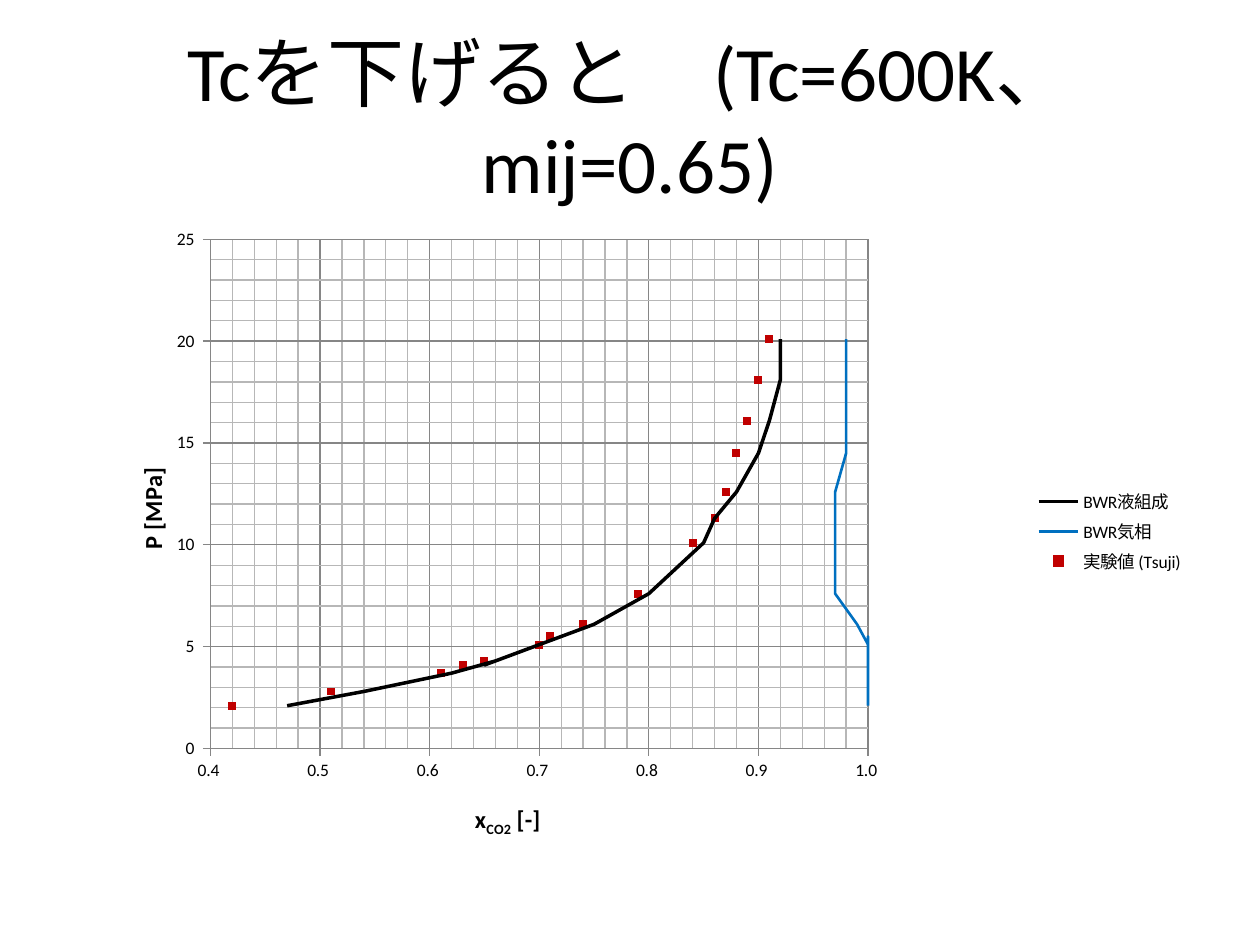
import pptx
import pptx.chart.data
import pptx.dml.color
import pptx.enum.chart
import pptx.enum.text
import pptx.oxml
import pptx.oxml.ns
import pptx.util

Cm, Pt = pptx.util.Cm, pptx.util.Pt
RGBColor = pptx.dml.color.RGBColor
BLACK = RGBColor(0x00, 0x00, 0x00)
BLUE = RGBColor(0x00, 0x70, 0xC0)
RED = RGBColor(0xC0, 0x00, 0x00)
GRAY = RGBColor(0x86, 0x86, 0x86)
LIGHT_GRAY = RGBColor(0xB7, 0xB7, 0xB7)
FONT = "Calibri"

HEADING = "Tcを下げると　(Tc=600K、mij=0.65)"
PRESSURE = [2.1, 2.8, 3.7, 4.3, 5.5, 4.1, 5.1, 6.1,
            7.6, 10.1, 11.3, 12.6, 14.5, 16.1, 18.1, 20.1]
COMPOSITION = {
    "BWR液組成": [0.47, 0.54, 0.62, 0.66, 0.72, 0.65, 0.7, 0.75,
               0.8, 0.85, 0.86, 0.88, 0.9, 0.91, 0.92, 0.92],
    "BWR気相": [1, 1, 1, 1, 1, 1, 1, 0.99,
              0.97, 0.97, 0.97, 0.97, 0.98, 0.98, 0.98, 0.98],
    "実験値 (Tsuji)": [0.42, 0.51, 0.61, 0.65, 0.71, 0.63, 0.7, 0.74,
                    0.79, 0.84, 0.86, 0.87, 0.88, 0.89, 0.9, 0.91],
}
CURVE_LINES = [(BLACK, 2), (BLUE, 1.5)]
AXIS_FORMATS = {
    "category_axis": {"minimum_scale": 0.4, "maximum_scale": 1, "major_unit": 0.1, "minor_unit": 0.02},
    "value_axis": {"minimum_scale": 0, "maximum_scale": 25, "major_unit": 5, "minor_unit": 1},
}
AXIS_LABELS = {
    "category_axis": ("0.0_ ", [("x", 0), ("CO2", -25000), (" [-]", 0)], {"x": 0.36, "y": 0.93}),
    "value_axis": ("0_ ", [("P [MPa]", 0)], {"x": 0.06, "y": 0.39}),
}
PLOT_BOX = {"x": 0.13, "y": 0.03, "w": 0.58, "h": 0.82}


def set_format(target, values):
    """Set each attribute of the target from a dict."""
    for key, value in values.items():
        setattr(target, key, value)


def set_layout(parent, fractions, inner=False):
    """Give a chart part a manual position in fractions of the chart."""
    tags = [("layoutTarget", "inner")] if inner else []
    tags += [(f"{key}Mode", "edge") for key in ("x", "y")]
    tags += list(fractions.items())
    body = "".join(f'<c:{tag} val="{value}"/>' for tag, value in tags)
    layout = pptx.oxml.parse_xml(
        f'<c:layout {pptx.oxml.ns.nsdecls("c")}><c:manualLayout>{body}</c:manualLayout></c:layout>')
    old = parent.find(pptx.oxml.ns.qn("c:layout"))
    if old is not None:
        parent.replace(old, layout)
    else:
        parent.insert(1 if parent.tag == pptx.oxml.ns.qn("c:title") else 0, layout)


def add_heading(slide, left, top, width, height):
    """Write the centred heading in its box."""
    frame = slide.shapes.add_textbox(left, top, width, height).text_frame
    set_format(frame, {"word_wrap": True, "vertical_anchor": pptx.enum.text.MSO_ANCHOR.MIDDLE})
    paragraph = frame.paragraphs[0]
    paragraph.alignment = pptx.enum.text.PP_ALIGN.CENTER
    run = paragraph.add_run()
    run.text = HEADING
    set_format(run.font, {"size": Pt(44), "name": FONT})
    run.font.color.rgb = BLACK


def color_minor_grid(axis):
    """Draw the minor gridlines of an axis in light gray."""
    grid = axis._element.find(pptx.oxml.ns.qn("c:minorGridlines"))
    grid.append(pptx.oxml.parse_xml(
        f'<c:spPr {pptx.oxml.ns.nsdecls("c", "a")}><a:ln w="{Pt(0.75)}"><a:solidFill>'
        f'<a:srgbClr val="{LIGHT_GRAY}"/></a:solidFill></a:ln></c:spPr>'))


def format_axis(axis, scale, number_format, title_parts, title_position):
    """Set scale, grid, labels and title of one axis."""
    set_format(axis, scale | {
        "has_major_gridlines": True, "has_minor_gridlines": True,
        "major_tick_mark": pptx.enum.chart.XL_TICK_MARK.OUTSIDE,
        "minor_tick_mark": pptx.enum.chart.XL_TICK_MARK.NONE,
        "crosses": pptx.enum.chart.XL_AXIS_CROSSES.MINIMUM,
    })
    set_format(axis.tick_labels, {"number_format": number_format, "number_format_is_linked": False})
    for part in (axis, axis.major_gridlines):
        part.format.line.color.rgb = GRAY
        part.format.line.width = Pt(0.75)
    color_minor_grid(axis)
    paragraph = axis.axis_title.text_frame.paragraphs[0]
    for text, baseline in title_parts:
        run = paragraph.add_run()
        run.text = text
        set_format(run.font, {"size": Pt(14), "bold": True, "name": FONT})
        run.font.color.rgb = BLACK
        if baseline:
            run.font._element.set("baseline", str(baseline))
    set_layout(axis.axis_title._element, title_position)


def format_series(plot):
    """Draw the calculated curves as lines and the measurements as squares."""
    *curves, measured = plot.series
    for curve, (color, width) in zip(curves, CURVE_LINES):
        curve.format.line.color.rgb = color
        curve.format.line.width = Pt(width)
    measured.format.line.fill.background()
    set_format(measured.marker, {"style": pptx.enum.chart.XL_MARKER_STYLE.SQUARE, "size": 4})
    measured.marker.format.fill.solid()
    measured.marker.format.fill.fore_color.rgb = RED
    measured.marker.format.line.color.rgb = RED


def add_pressure_chart(slide, left, top, width, height):
    """Place the pressure against composition chart in its box."""
    data = pptx.chart.data.XyChartData()
    for name, fractions in COMPOSITION.items():
        series = data.add_series(name)
        for fraction, pressure in zip(fractions, PRESSURE):
            series.add_data_point(fraction, pressure)
    chart = slide.shapes.add_chart(
        pptx.enum.chart.XL_CHART_TYPE.XY_SCATTER_SMOOTH_NO_MARKERS,
        left, top, width, height, data).chart
    set_format(chart, {"has_title": False, "has_legend": True})
    set_format(chart.font, {"size": Pt(10), "name": FONT})
    chart.font.color.rgb = BLACK
    set_format(chart.legend, {"position": pptx.enum.chart.XL_LEGEND_POSITION.RIGHT,
                              "include_in_layout": False})
    chart.plots[0].vary_by_categories = False
    for axis_name, scale in AXIS_FORMATS.items():
        format_axis(getattr(chart, axis_name), scale, *AXIS_LABELS[axis_name])
    format_series(chart.plots[0])
    set_layout(chart._chartSpace.chart.plotArea, PLOT_BOX, inner=True)


def main():
    """Build the slide and save it."""
    deck = pptx.Presentation()
    set_format(deck, {"slide_width": Cm(25.4), "slide_height": Cm(19.05)})
    slide = deck.slides.add_slide(deck.slide_layouts[6])
    add_heading(slide, Cm(1.27), Cm(0.76), Cm(22.86), Cm(3.18))
    add_pressure_chart(slide, Cm(1.27), Cm(4.45), Cm(22.86), Cm(12.57))
    deck.save("out.pptx")


if __name__ == "__main__":
    main()
